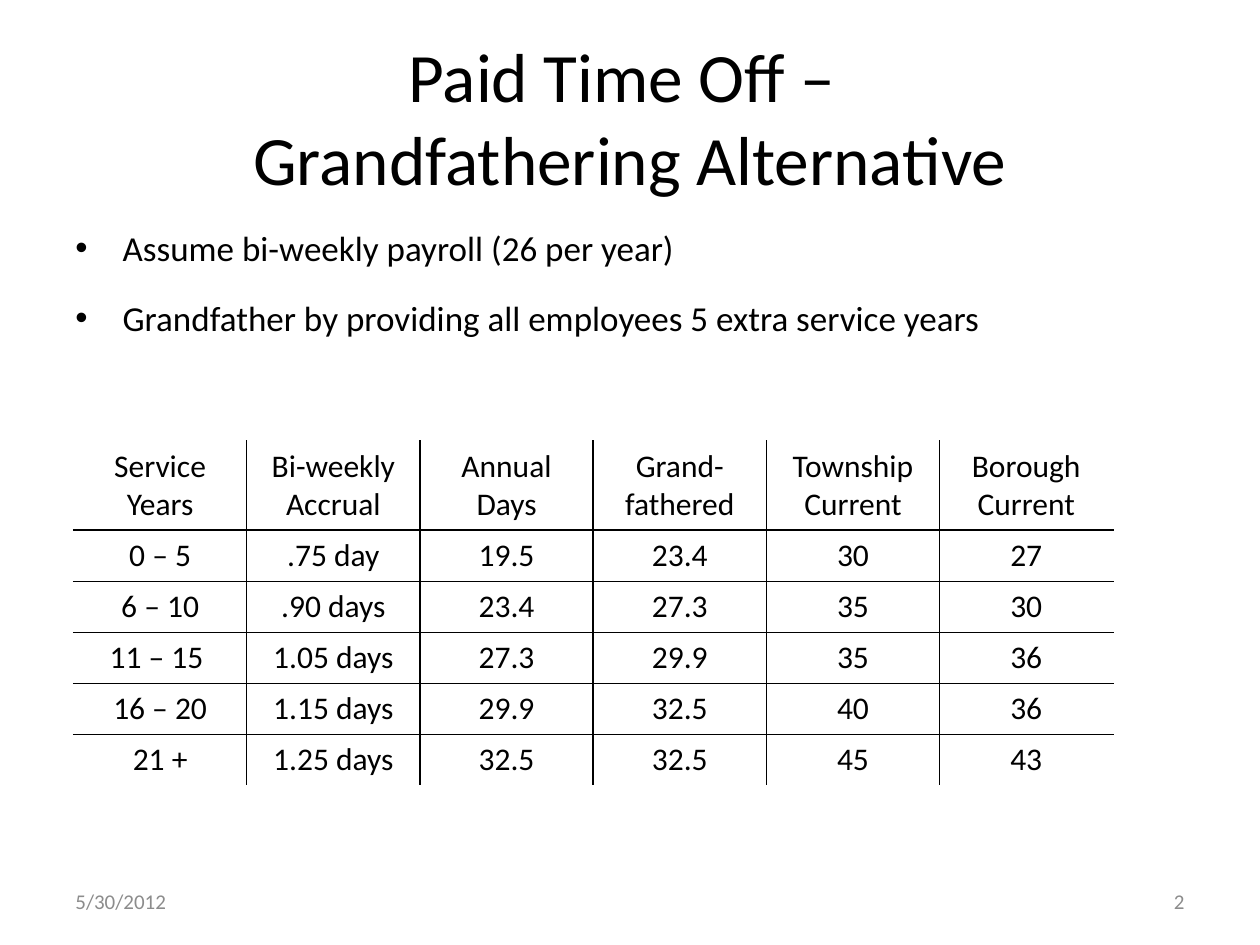
from lxml import etree
from pptx import Presentation
from pptx.dml.color import RGBColor
from pptx.enum import text as t
from pptx.oxml.ns import qn
from pptx.util import Pt

FONT = "Calibri"
BLACK, WHITE, GREY = "000000", "FFFFFF", "8C8C8C"
LEFT, MID, RIGHT = t.PP_ALIGN.LEFT, t.PP_ALIGN.CENTER, t.PP_ALIGN.RIGHT
ROWS = [
    ["Service Years", "Bi-weekly Accrual", "Annual Days",
     "Grand- fathered", "Township Current", "Borough Current"],
    ["0 – 5", ".75 day", "19.5", "23.4", "30", "27"],
    ["6 – 10", ".90 days", "23.4", "27.3", "35", "30"],
    ["11 – 15 ", "1.05 days", "27.3", "29.9", "35", "36"],
    ["16 – 20", "1.15 days", "29.9", "32.5", "40", "36"],
    ["21 +", "1.25 days", "32.5", "32.5", "45", "43"],
]


def rgb(code):
    return RGBColor.from_string(code)


def style(para, size, color=BLACK, align=LEFT):
    para.alignment = align
    for run in para.runs:
        run.font.name = FONT
        run.font.size = Pt(size)
        run.font.color.rgb = rgb(color)


def add_text(slide, box, lines, size, color=BLACK, align=LEFT,
             anchor=t.MSO_ANCHOR.MIDDLE):
    frame = slide.shapes.add_textbox(*map(Pt, box)).text_frame
    frame.word_wrap = True
    frame.vertical_anchor = anchor
    for i, line in enumerate(lines):
        para = frame.add_paragraph() if i else frame.paragraphs[0]
        para.text = line
        style(para, size, color, align)
    return frame


def add_points(slide, box, lines):
    frame = add_text(slide, box, lines, 20, anchor=t.MSO_ANCHOR.TOP)
    for para in frame.paragraphs:
        para.space_before, para.space_after = Pt(4), Pt(12)
        props = para._p.get_or_add_pPr()
        props.set("marL", str(Pt(27)))
        props.set("indent", str(-Pt(27)))
        etree.SubElement(props, qn("a:buFont"), typeface="Arial")
        etree.SubElement(props, qn("a:buChar"), char="•")


def set_edge(cell, side, color):
    line = etree.SubElement(cell._tc.get_or_add_tcPr(), qn("a:ln" + side),
                            w=str(Pt(1)))
    fill = etree.SubElement(line, qn("a:solidFill"))
    etree.SubElement(fill, qn("a:srgbClr"), val=color)


def add_grid(slide, box, rows, head):
    x, y, wide, high = box
    last, end = len(rows) - 1, len(rows[0]) - 1
    grid = slide.shapes.add_table(last + 1, end + 1, *map(Pt, box)).table
    grid.first_row = grid.horz_banding = False
    for col in grid.columns:
        col.width = Pt(wide / (end + 1))
    for r, row in enumerate(rows):
        grid.rows[r].height = Pt((high - head) / last if r else head)
        for c, word in enumerate(row):
            cell = grid.cell(r, c)
            cell.text_frame.text = word
            style(cell.text_frame.paragraphs[0], 18, align=MID)
            # White outer edges, black inner rules
            outer = {"L": c == 0, "R": c == end, "T": r == 0, "B": r == last}
            for side, out in outer.items():
                set_edge(cell, side, WHITE if out else BLACK)
            cell.fill.background()


def add_footer(slide, box, date, page):
    x, y, wide, high = box
    part = 168
    add_text(slide, (x, y, part, high), [date], 12, GREY)
    add_text(slide, (x + wide - part, y, part, high), [page], 12, GREY, RIGHT)


def main():
    deck = Presentation()
    deck.slide_width, deck.slide_height = Pt(720), Pt(540)
    slide = deck.slides.add_slide(deck.slide_layouts[6])
    # Title
    add_text(slide, (36, 21.6, 648, 90),
             ["Paid Time Off – \nGrandfathering Alternative"], 39.6, align=MID)
    # Assumptions
    add_points(slide, (36, 126, 648, 384), [
        "Assume bi-weekly payroll (26 per year)",
        "Grandfather by providing all employees 5 extra service years"])
    # Footer
    add_footer(slide, (36, 500.5, 648, 28.75), "5/30/2012", "2")
    # Leave table
    add_grid(slide, (42, 252, 594, 197), ROWS, 51)
    deck.save("out.pptx")


if __name__ == "__main__":
    main()
